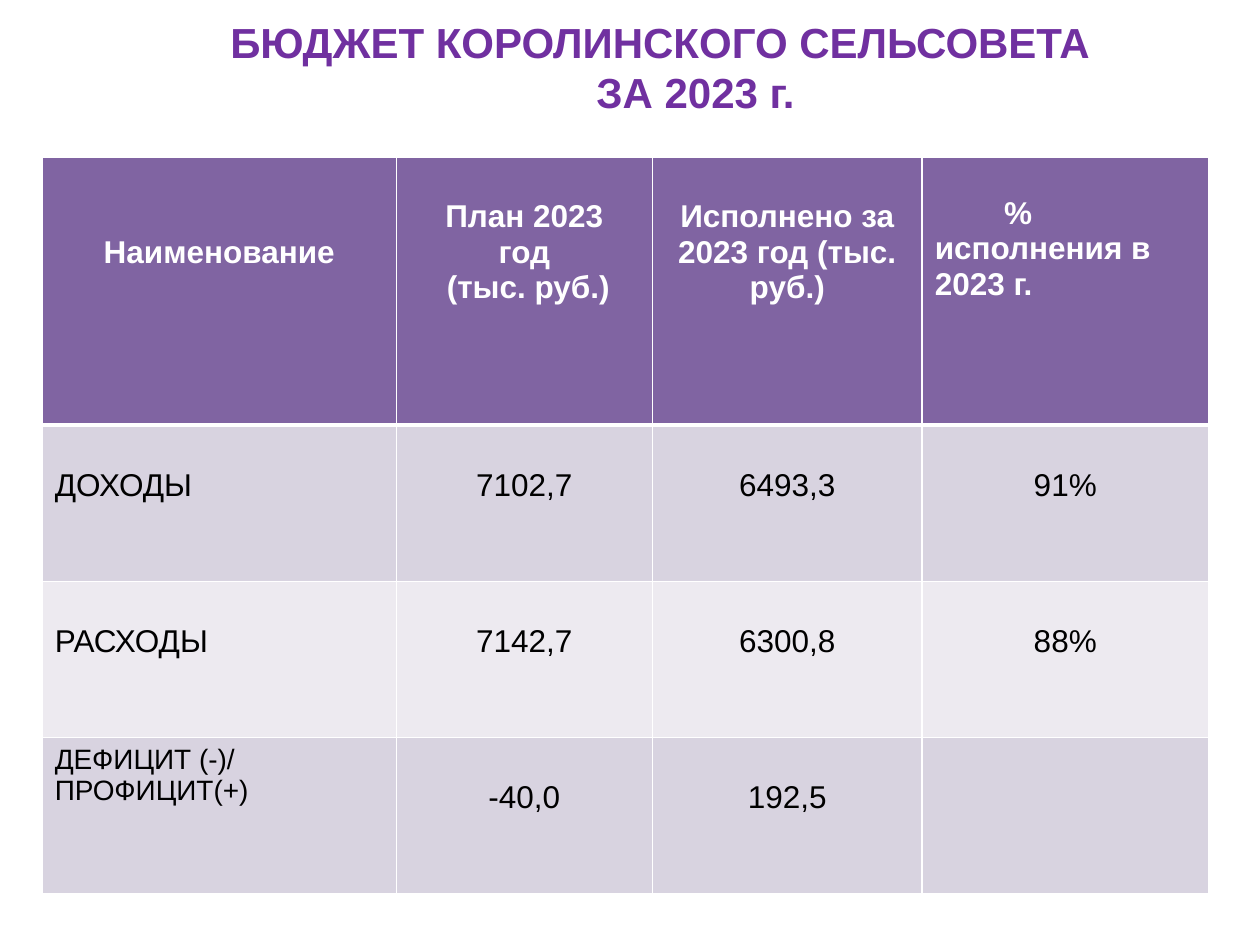
from lxml.etree import SubElement
from pptx import Presentation
from pptx.dml.color import RGBColor
from pptx.enum.text import PP_ALIGN
from pptx.oxml.ns import qn
from pptx.util import Cm, Pt

COLORS = {
    "title": "7030A0",
    "header": "8064A2",
    "band_dark": "D8D3E0",
    "band_light": "EDEAF0",
    "white": "FFFFFF",
    "black": "000000",
}
FONT = "Arial"
COLUMN_WIDTHS = [7.14, 5.16, 5.44, 5.77]
ROW_HEIGHTS = [5.41, 3.15, 3.15, 3.15]
TOP_MARGIN = 0.86
CENTER, LEFT = PP_ALIGN.CENTER, PP_ALIGN.LEFT

# Each heading: top margin, alignment, lines as (text, first-line indent)
HEADINGS = [
    (1.58, CENTER, [("Наименование", 0)]),
    (TOP_MARGIN, CENTER, [("План 2023\vгод", -0.73), ("(тыс. руб.)", 0.16)]),
    (TOP_MARGIN, CENTER, [("Исполнено за 2023 год (тыс. руб.)", 0)]),
    (0.79, LEFT, [("% исполнения в 2023 г.", 1.4)]),
]
BUDGET = [
    ("ДОХОДЫ", "7102,7", "6493,3", "91%"),
    ("РАСХОДЫ", "7142,7", "6300,8", "88%"),
]
BALANCE_LABEL = ["ДЕФИЦИТ (-)/", "ПРОФИЦИТ(+)"]
BALANCE = ["-40,0", "192,5", ""]


def rgb(name):
    return RGBColor.from_string(COLORS[name])


def write_lines(frame, lines, size, color, align, bold=False):
    """Fill a frame with (text, first-line indent in cm) paragraphs."""
    for index, (text, indent) in enumerate(lines):
        line = frame.add_paragraph() if index else frame.paragraphs[0]
        line.text = text
        line.alignment = align
        if indent:
            line._p.get_or_add_pPr().set("indent", str(Cm(indent)))
        line.font.name = FONT
        line.font.size = Pt(size)
        line.font.bold = bold
        line.font.color.rgb = rgb(color)


def set_borders(cell, top=1, bottom=1):
    """Draw white borders; they must precede the fill in the cell XML."""
    properties = cell._tc.get_or_add_tcPr()
    for side, width in (("L", 1), ("R", 1), ("T", top), ("B", bottom)):
        border = SubElement(properties, qn(f"a:ln{side}"), w=str(Pt(width)))
        fill = SubElement(border, qn("a:solidFill"))
        SubElement(fill, qn("a:srgbClr"), val=COLORS["white"])


def style_cell(cell, fill, top_margin, top=1, bottom=1):
    set_borders(cell, top, bottom)
    cell.fill.solid()
    cell.fill.fore_color.rgb = rgb(fill)
    cell.margin_top = Cm(top_margin)


def add_title(slide):
    title = slide.shapes.add_textbox(Cm(0), Cm(0.2), Cm(24.77), Cm(2.31))
    title.text_frame.word_wrap = True
    lines = [("БЮДЖЕТ КОРОЛИНСКОГО СЕЛЬСОВЕТА", 1.85), ("ЗА 2023 г.", 3.27)]
    write_lines(title.text_frame, lines, 24, "title", CENTER, bold=True)


def add_header(table):
    for cell, (margin, align, lines) in zip(table.rows[0].cells, HEADINGS):
        style_cell(cell, "header", margin, bottom=3)
        write_lines(cell.text_frame, lines, 18, "white", align, bold=True)


def add_row(table, row, label_lines, values, label_size=18, label_margin=TOP_MARGIN):
    fill = "band_dark" if row % 2 else "band_light"
    top = 3 if row == 1 else 1
    label, *value_cells = table.rows[row].cells
    style_cell(label, fill, label_margin, top=top)
    write_lines(label.text_frame, [(text, 0) for text in label_lines],
                label_size, "black", LEFT)
    for cell, value in zip(value_cells, values):
        style_cell(cell, fill, TOP_MARGIN, top=top)
        if value:
            write_lines(cell.text_frame, [(value, 0)], 18, "black", CENTER)


def add_budget_table(slide):
    table = slide.shapes.add_table(
        len(ROW_HEIGHTS), len(COLUMN_WIDTHS), Cm(0.85), Cm(3.16),
        Cm(sum(COLUMN_WIDTHS)), Cm(sum(ROW_HEIGHTS))).table
    for column, width in zip(table.columns, COLUMN_WIDTHS):
        column.width = Cm(width)
    for row, height in zip(table.rows, ROW_HEIGHTS):
        row.height = Cm(height)
    add_header(table)
    for row, (label, *values) in enumerate(BUDGET, start=1):
        add_row(table, row, [label], values)
    add_row(table, len(BUDGET) + 1, BALANCE_LABEL, BALANCE,
            label_size=16, label_margin=0.13)


def main():
    presentation = Presentation()
    presentation.slide_width = Cm(25.4)
    presentation.slide_height = Cm(19.05)
    slide = presentation.slides.add_slide(presentation.slide_layouts[6])
    add_title(slide)
    add_budget_table(slide)
    presentation.save("out.pptx")


if __name__ == "__main__":
    main()
